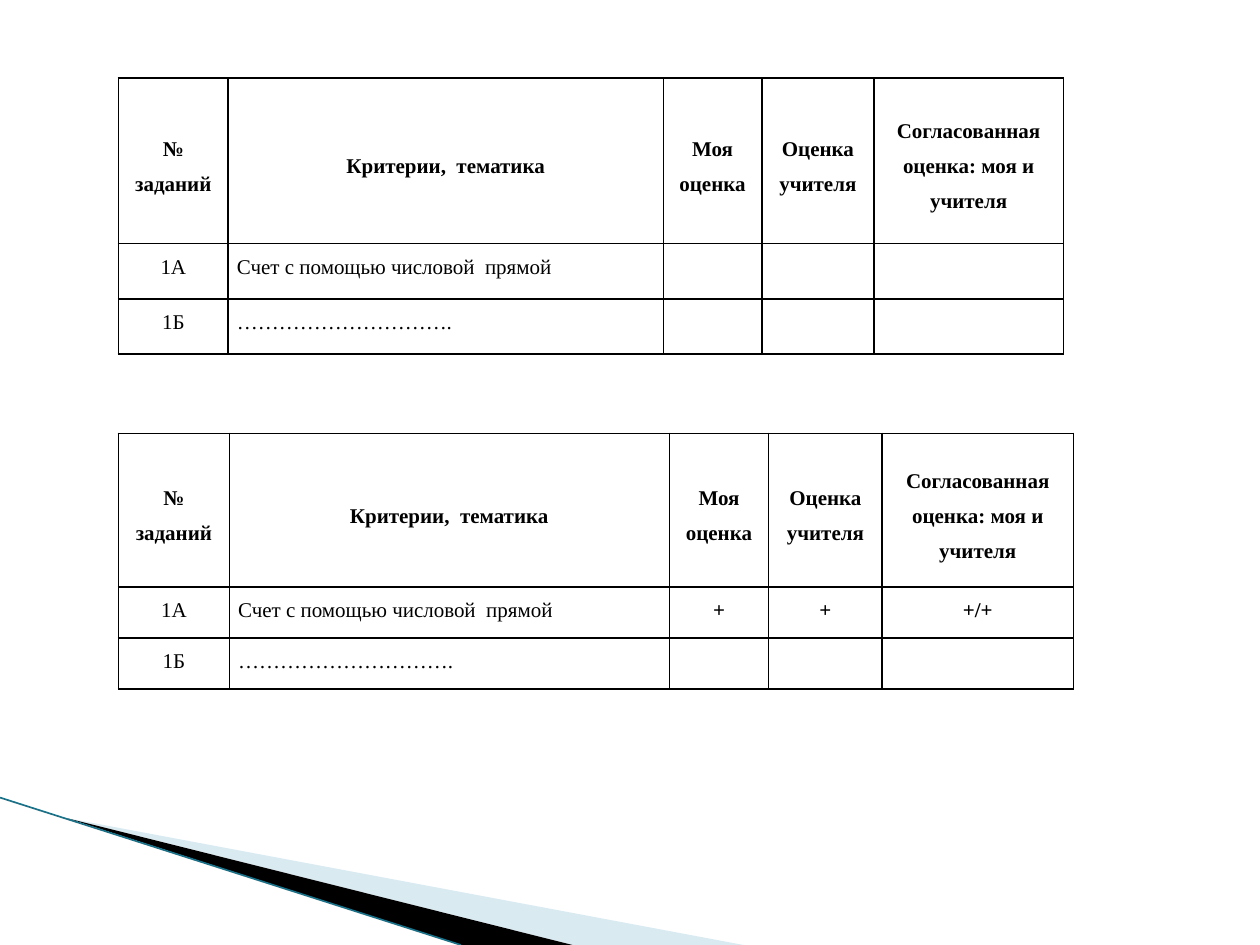
from lxml import etree
from pptx import Presentation
from pptx.dml.color import RGBColor
from pptx.enum.shapes import MSO_CONNECTOR
from pptx.enum.text import MSO_ANCHOR, PP_ALIGN
from pptx.oxml.ns import qn
from pptx.util import Inches, Pt

CENTER, JUSTIFY = PP_ALIGN.CENTER, PP_ALIGN.JUSTIFY
MIDDLE, TOP = MSO_ANCHOR.MIDDLE, MSO_ANCHOR.TOP
STRAIGHT = MSO_CONNECTOR.STRAIGHT

COLORS = {"ink": "000000", "pale": "A0CBDC", "edge": "1B7187"}
FONT = "Times New Roman"
COLUMN_SHARES = [0.87, 3.45, 0.78, 0.89, 1.5]
ROW_SHARES = [3, 1, 1]
CRITERIA_COLUMN = 1

HEADER = ["№\nзаданий", "Критерии,  тематика", "Моя оценка", "Оценка учителя",
          "Согласованная\nоценка: моя и учителя"]
COUNTING = ["1А", "Счет с помощью числовой  прямой"]
DOTTED = ["1Б", "………………………….", "", "", ""]

# Boxes: left, top, width, height in inches
EMPTY_TABLE_BOX = (0.94, 0.62, 7.5, 2.19)
MARKED_TABLE_BOX = (0.94, 3.44, 7.58, 2.03)
WEDGE_BOX = (0, 6.33, 5.9, 1.17)


def color(name):
    return RGBColor.from_string(COLORS[name])


def split(total, shares):
    return [Inches(total * share / sum(shares)) for share in shares]


def add_borders(cell):
    properties = cell._tc.get_or_add_tcPr()
    for side in ("a:lnL", "a:lnR", "a:lnT", "a:lnB"):
        line = etree.SubElement(properties, qn(side), w=str(Pt(1)))
        fill = etree.SubElement(line, qn("a:solidFill"))
        etree.SubElement(fill, qn("a:srgbClr"), val=COLORS["ink"])


def fill_cell(cell, text, is_header, is_bold, alignment):
    add_borders(cell)
    cell.fill.background()
    cell.margin_left = cell.margin_right = Inches(0.07)
    cell.margin_top = cell.margin_bottom = 0
    cell.vertical_anchor = MIDDLE if is_header else TOP
    cell.text = text
    for paragraph in cell.text_frame.paragraphs:
        paragraph.alignment = alignment
        paragraph.line_spacing = 1.5
        paragraph.font.name = FONT
        paragraph.font.size = Pt(12)
        paragraph.font.bold = is_bold
        paragraph.font.color.rgb = color("ink")


def add_grade_table(slide, box, marks):
    rows = [HEADER, COUNTING + marks, DOTTED]
    left, top, width, height = box
    table = slide.shapes.add_table(len(rows), len(HEADER),
                                   *(Inches(length) for length in box)).table
    for column, column_width in zip(table.columns, split(width, COLUMN_SHARES)):
        column.width = column_width
    for row, row_height in zip(table.rows, split(height, ROW_SHARES)):
        row.height = row_height
    for row_index, row in enumerate(rows):
        is_header = row_index == 0
        for column_index, text in enumerate(row):
            is_bold = is_header or column_index > CRITERIA_COLUMN
            is_criterion = column_index == CRITERIA_COLUMN and not is_header
            fill_cell(table.cell(row_index, column_index), text, is_header,
                      is_bold, JUSTIFY if is_criterion else CENTER)


def add_corner_wedges(slide, box):
    left, top, width, height = box

    def place(x_share, y_share):
        return Inches(left + x_share * width), Inches(top + y_share * height)

    def add_wedge(corners, color_name):
        points = [place(*corner) for corner in corners]
        builder = slide.shapes.build_freeform(*points[0])
        builder.add_line_segments(points[1:])
        wedge = builder.convert_to_shape()
        wedge.shadow.inherit = False
        wedge.line.fill.background()
        wedge.fill.solid()
        wedge.fill.fore_color.rgb = color(color_name)
        return wedge

    tip = (0.09, 0.14)
    pale = add_wedge([tip, (1, 1), (0.77, 1)], "pale")
    pale_color = pale._element.spPr.find(".//" + qn("a:srgbClr"))
    etree.SubElement(pale_color, qn("a:alpha"), val="40000")
    add_wedge([tip, (0.77, 1), (0.62, 1)], "ink")

    edge = slide.shapes.add_connector(STRAIGHT, *place(0, 0), *place(0.62, 1))
    edge.line.color.rgb = color("edge")
    edge.line.width = Pt(0.95)
    etree.SubElement(edge._element.spPr, qn("a:effectLst"))


def main():
    presentation = Presentation()
    presentation.slide_width = Inches(10)
    presentation.slide_height = Inches(7.5)
    slide = presentation.slides.add_slide(presentation.slide_layouts[6])
    add_corner_wedges(slide, WEDGE_BOX)
    add_grade_table(slide, EMPTY_TABLE_BOX, ["", "", ""])
    add_grade_table(slide, MARKED_TABLE_BOX, ["+", "+", "+/+"])
    presentation.save("out.pptx")


if __name__ == "__main__":
    main()
